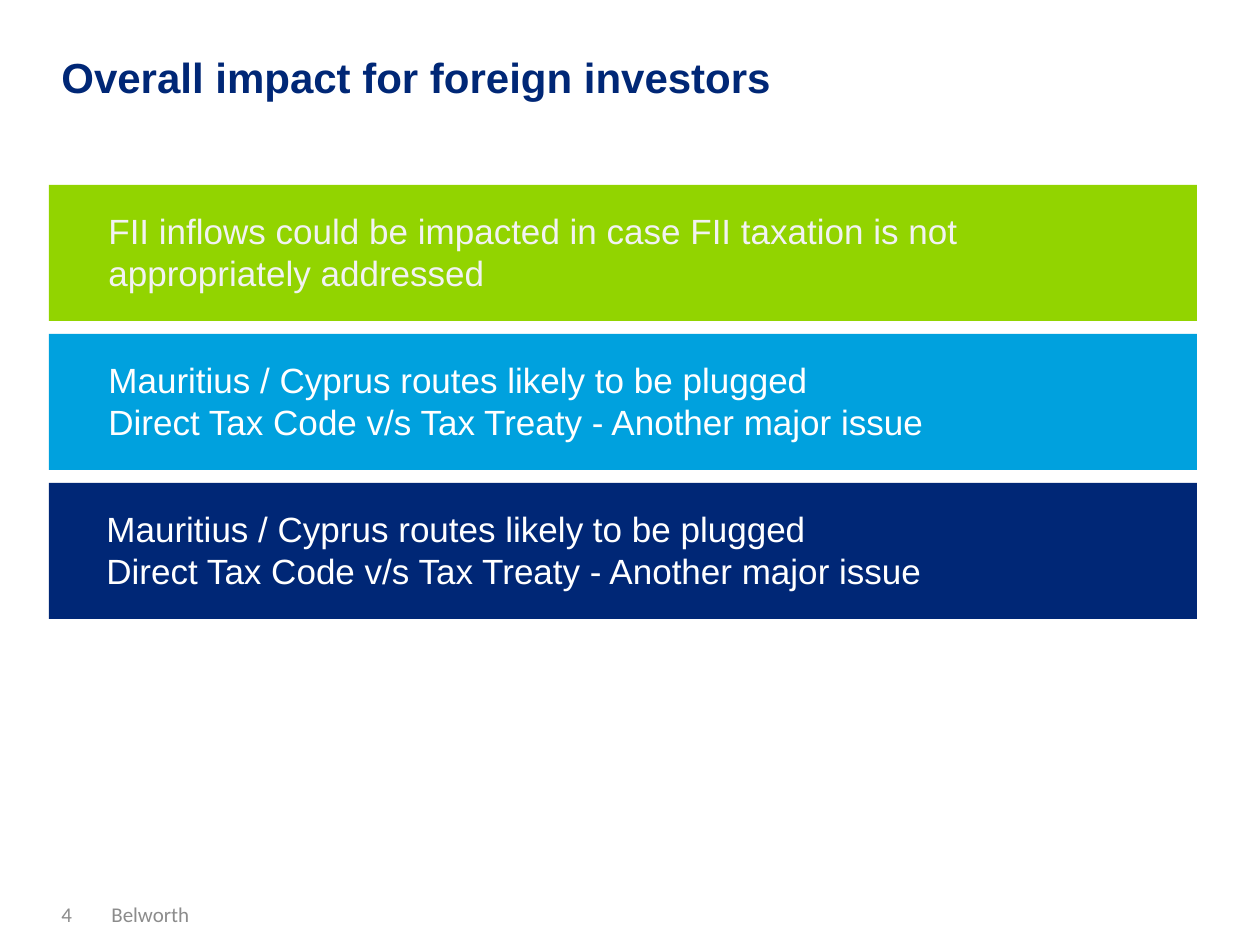
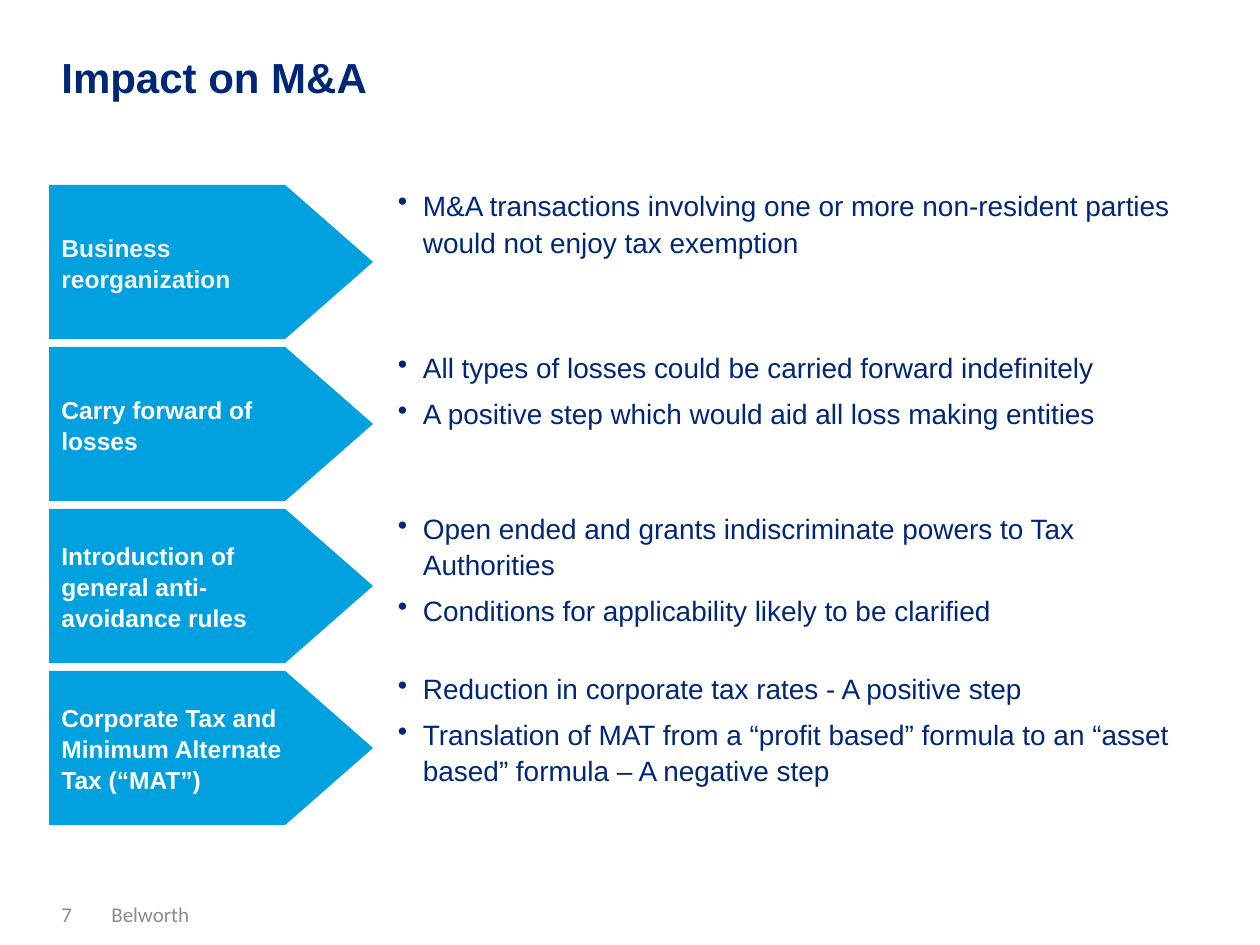
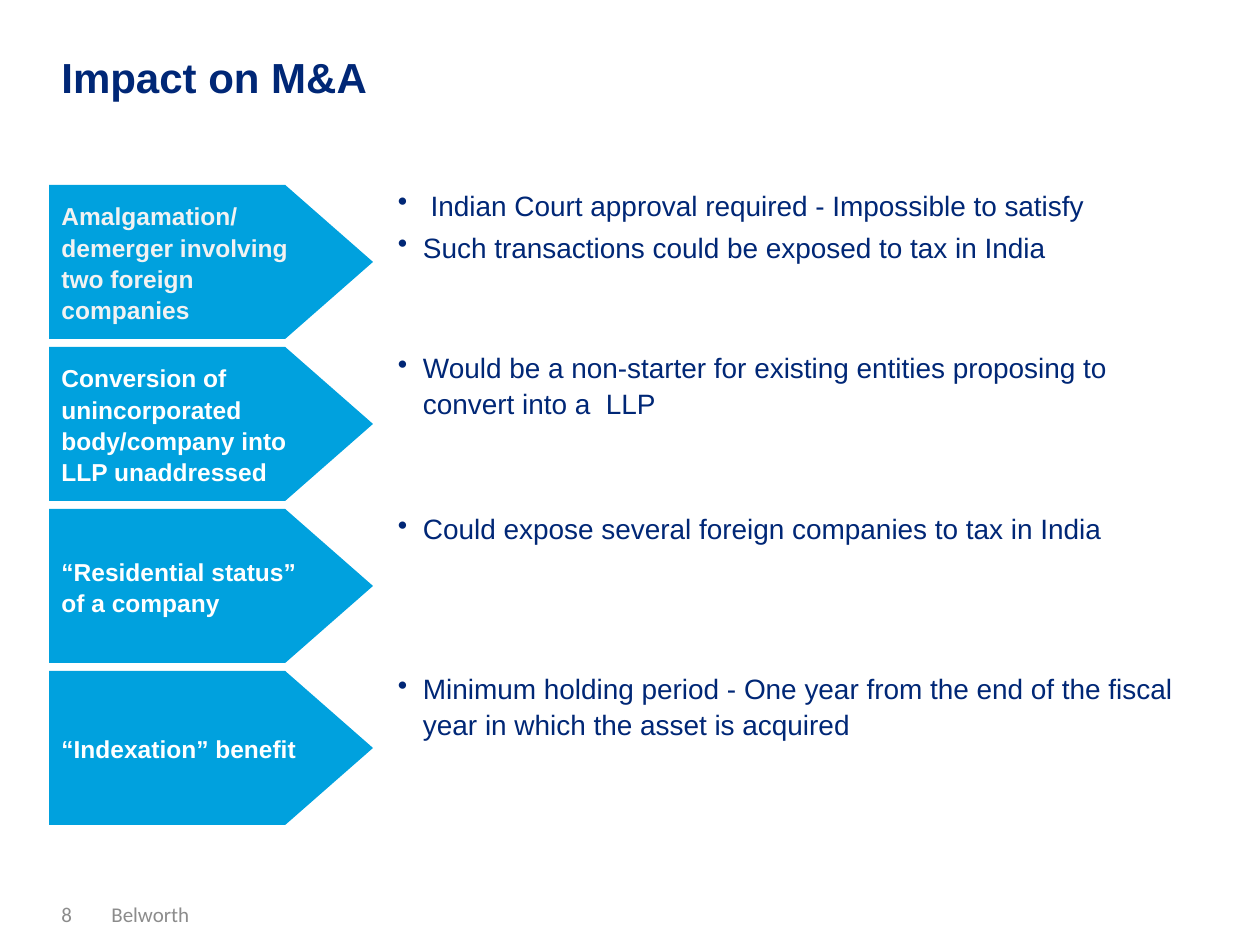
import pptx
import pptx.util
import pptx.dml.color
import pptx.enum.shapes
import pptx.enum.text
import lxml.etree
from pptx.oxml.ns import qn

# Shared look
EMU_PER_PX = 914400 / 126
NAVY = pptx.dml.color.RGBColor(0x00, 0x27, 0x76)
BLUE = pptx.dml.color.RGBColor(0x00, 0xA1, 0xDE)
GREEN = pptx.dml.color.RGBColor(0x92, 0xD4, 0x00)
WHITE = pptx.dml.color.RGBColor(0xFF, 0xFF, 0xFF)
PALE = pptx.dml.color.RGBColor(0xF2, 0xF2, 0xF2)
GREY = pptx.dml.color.RGBColor(0x8C, 0x8C, 0x8C)
TOP = pptx.enum.text.MSO_ANCHOR.TOP
MIDDLE = pptx.enum.text.MSO_ANCHOR.MIDDLE
SHAPES = pptx.enum.shapes.MSO_SHAPE
FIRM = "Belworth"

# Shared grid, in px
LEFT = 49
FIRST_TOP = 185
BAND_WIDTH, BAND_HEIGHT, BAND_PITCH = 1148, 136, 149
ARROW_WIDTH, ARROW_HEIGHT, ARROW_PITCH = 324, 154, 162
BULLET_LEFT, BULLET_HEIGHT, BULLET_INDENT = 398, 123, 25
BULLET_TOPS = (185, 349, 510, 670)

# Content
ROUTES = ("Mauritius / Cyprus routes likely to be plugged",
          "Direct Tax Code v/s Tax Treaty - Another major issue")
# fill, text colour, text left, lines
BANDS = (
    (GREEN, PALE, 96, ("FII inflows could be impacted in case FII taxation "
                       "is not appropriately addressed",)),
    (BLUE, WHITE, 96, ROUTES),
    (NAVY, WHITE, 94, ROUTES),
)
# arrow label, width of the points, points
REORGANIZATION_ROWS = (
    ("Business reorganization", 810,
     ("M&A transactions involving one or more non-resident parties "
      "would not enjoy tax exemption",)),
    ("Carry forward of losses", 810,
     ("All types of losses could be carried forward indefinitely",
      "A positive step which would aid all loss making entities")),
    ("Introduction of general anti-avoidance rules", 767,
     ("Open ended and grants indiscriminate powers to Tax Authorities",
      "Conditions for applicability likely to be clarified")),
    ("Corporate Tax and Minimum Alternate Tax (“MAT”)", 820,
     ("Reduction in corporate tax rates - A positive step",
      "Translation of MAT from a “profit based” formula to an "
      "“asset based” formula – A negative step")),
)
AMALGAMATION_ROWS = (
    ("Amalgamation/ demerger involving two foreign companies", 757,
     (" Indian Court approval required - Impossible to satisfy",
      "Such transactions could be exposed to tax in India")),
    ("Conversion of unincorporated body/company into LLP unaddressed", 767,
     ("Would be a non-starter for existing entities proposing to "
      "convert into a  LLP",)),
    ("“Residential status” of a company", 767,
     ("Could expose several foreign companies to tax in India",)),
    ("“Indexation” benefit", 810,
     ("Minimum holding period - One year from the end of the fiscal "
      "year in which the asset is acquired",)),
)


def px(length):
    return pptx.util.Emu(round(length * EMU_PER_PX))


def style(paragraph, size, color, bold=False, face="Arial"):
    paragraph.alignment = pptx.enum.text.PP_ALIGN.LEFT
    paragraph.font.name = face
    paragraph.font.size = pptx.util.Pt(size)
    paragraph.font.bold = bold
    paragraph.font.color.rgb = color


def add_text(slide, box, lines, size, color, bold=False, face="Arial",
             anchor=TOP):
    frame = slide.shapes.add_textbox(*map(px, box)).text_frame
    frame.word_wrap = True
    frame.vertical_anchor = anchor
    frame.text = "\n".join(lines)
    for paragraph in frame.paragraphs:
        style(paragraph, size, color, bold, face)
    return frame


def add_block(slide, preset, box, fill):
    block = slide.shapes.add_shape(preset, *map(px, box))
    block.shadow.inherit = False
    block.fill.solid()
    block.fill.fore_color.rgb = fill
    block.line.fill.background()
    return block


def add_bullet(paragraph):
    properties = paragraph._p.get_or_add_pPr()
    properties.set("marL", str(px(BULLET_INDENT)))
    properties.set("indent", str(-px(BULLET_INDENT)))
    bullet = lxml.etree.Element(qn("a:buChar"), char="•")
    properties.insert_element_before(bullet, "a:tabLst", "a:defRPr", "a:extLst")


def add_points(slide, top, width, points, is_first):
    frame = add_text(slide, (BULLET_LEFT, top, width, BULLET_HEIGHT),
                     points, 16, NAVY)
    frame.margin_left = frame.margin_right = 0
    frame.margin_top = frame.margin_bottom = 0
    for paragraph in frame.paragraphs:
        add_bullet(paragraph)
        if is_first:
            paragraph.line_spacing = 1.1
            paragraph.space_after = pptx.util.Pt(3)
        else:
            paragraph.line_spacing = 1.06
            paragraph.space_before = pptx.util.Pt(5.8)


def add_arrow(slide, top, label, color):
    arrow = add_block(slide, SHAPES.PENTAGON,
                      (LEFT, top, ARROW_WIDTH, ARROW_HEIGHT), BLUE)
    arrow.adjustments[0] = 0.57
    frame = arrow.text_frame
    frame.word_wrap = True
    frame.vertical_anchor = MIDDLE
    frame.text = label
    style(frame.paragraphs[0], 14, color, bold=True)
    frame.paragraphs[0].line_spacing = 1.06


def add_page(deck, title, number):
    slide = deck.slides.add_slide(deck.slide_layouts[6])
    add_text(slide, (LEFT, 33, 794, 87), [title], 24, NAVY, bold=True,
             anchor=MIDDLE)
    for left, width, words in ((LEFT, 50, str(number)), (99, 745, FIRM)):
        add_text(slide, (left, 906, width, 16), [words], 12, GREY,
                 face="Calibri", anchor=MIDDLE)
    return slide


def add_band_page(deck, title, number, bands):
    slide = add_page(deck, title, number)
    for row, (fill, color, text_left, lines) in enumerate(bands):
        top = FIRST_TOP + row * BAND_PITCH
        add_block(slide, SHAPES.RECTANGLE,
                  (LEFT, top, BAND_WIDTH, BAND_HEIGHT), fill)
        add_text(slide, (text_left, top + 18, 1078, BAND_HEIGHT),
                 lines, 20, color)


def add_arrow_page(deck, title, number, rows):
    slide = add_page(deck, title, number)
    for row, (label, width, points) in enumerate(rows):
        is_first = row == 0
        add_arrow(slide, FIRST_TOP + row * ARROW_PITCH, label,
                  PALE if is_first else WHITE)
        add_points(slide, BULLET_TOPS[row], width, points, is_first)


def main():
    deck = pptx.Presentation()
    deck.slide_width, deck.slide_height = px(1260), px(945)
    add_band_page(deck, "Overall impact for foreign investors", 4, BANDS)
    add_arrow_page(deck, "Impact on M&A", 7, REORGANIZATION_ROWS)
    add_arrow_page(deck, "Impact on M&A", 8, AMALGAMATION_ROWS)
    deck.save("out.pptx")


if __name__ == "__main__":
    main()
